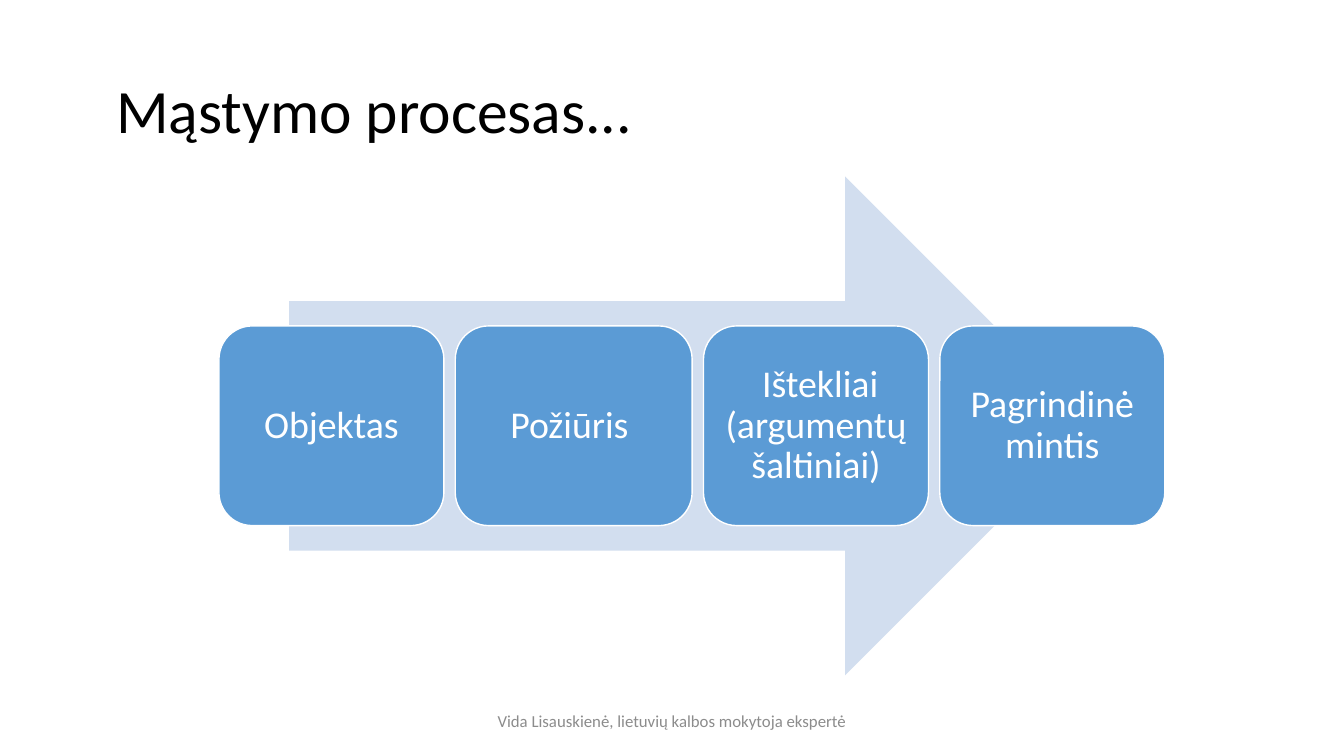
import pptx
import pptx.util
import pptx.dml.color
import pptx.enum.shapes
import pptx.enum.text

Pt = pptx.util.Pt
SHAPES = pptx.enum.shapes.MSO_SHAPE
ALIGN = pptx.enum.text.PP_ALIGN

FONT = "Calibri"
COLOURS = {
    "title": "000000",
    "arrow": "D2DEEF",
    "step": "5B9BD5",
    "white": "FFFFFF",
    "footer": "8C8C8C",
}

# Wording and width of each step
STEPS = [
    ("Objektas", 160.7),
    ("Požiūris ", 169.2),
    (" Ištekliai (argumentų šaltiniai)", 160.7),
    ("Pagrindinė mintis", 160.7),
]
STEPS_LEFT, STEPS_TOP, STEP_HEIGHT, STEP_GAP = 156.4, 232.8, 142.6, 8.1
# Rounded corners already narrow the text area, so the inset is small
STEP_INSET = 7


def colour(name):
    return pptx.dml.color.RGBColor.from_string(COLOURS[name])


def write_text(box, text, size, colour_name, align, line_spacing=1.0, inset=None):
    """Put one vertically centred, wrapping paragraph into a box."""
    frame = box.text_frame
    frame.word_wrap = True
    frame.vertical_anchor = pptx.enum.text.MSO_ANCHOR.MIDDLE
    if inset is not None:
        frame.margin_left = frame.margin_right = Pt(inset)
        frame.margin_top = frame.margin_bottom = Pt(inset)
    para = frame.paragraphs[0]
    para.alignment = align
    para.line_spacing = line_spacing
    span = para.add_run()
    span.text = text
    span.font.name = FONT
    span.font.size = Pt(size)
    span.font.color.rgb = colour(colour_name)


def add_label(page, left, top, width, height, *text_options):
    box = page.shapes.add_textbox(Pt(left), Pt(top), Pt(width), Pt(height))
    write_text(box, *text_options)


def add_filled_shape(page, kind, left, top, width, height, fill, line=None):
    shape = page.shapes.add_shape(kind, Pt(left), Pt(top), Pt(width), Pt(height))
    shape.shadow.inherit = False
    shape.fill.solid()
    shape.fill.fore_color.rgb = colour(fill)
    if line:
        shape.line.color.rgb = colour(line)
        shape.line.width = Pt(1)
    else:
        shape.line.fill.background()
    return shape


def add_steps(page):
    left = STEPS_LEFT
    for text, width in STEPS:
        step = add_filled_shape(page, SHAPES.ROUNDED_RECTANGLE, left, STEPS_TOP,
                                width, STEP_HEIGHT, "step", "white")
        write_text(step, text, 27, "white", ALIGN.CENTER, 0.9, STEP_INSET)
        left += width + STEP_GAP


def main():
    deck = pptx.Presentation()
    deck.slide_width, deck.slide_height = Pt(960), Pt(540)
    page = deck.slides.add_slide(deck.slide_layouts[6])
    add_label(page, 66, 28.8, 828, 104.4,
              " Mąstymo procesas...", 44, "title", ALIGN.LEFT, 0.9)
    add_filled_shape(page, SHAPES.RIGHT_ARROW, 206.6, 126, 575.3, 356.4, "arrow")
    add_steps(page)
    add_label(page, 318, 500.5, 324, 28.8,
              "Vida Lisauskienė, lietuvių kalbos mokytoja ekspertė",
              12, "footer", ALIGN.CENTER)
    deck.save("out.pptx")


if __name__ == "__main__":
    main()
